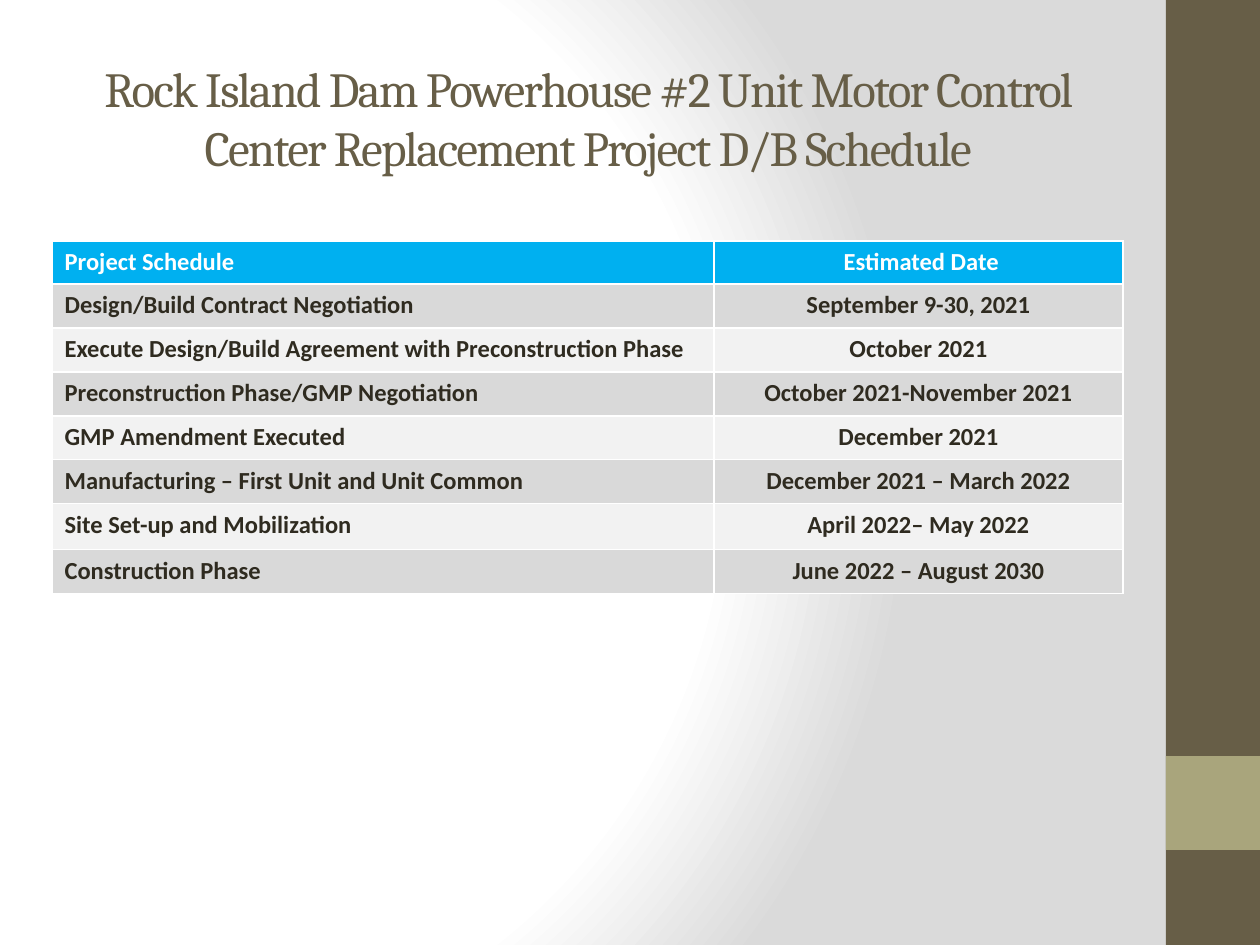
from dataclasses import dataclass

from lxml import etree
from pptx import Presentation
from pptx import oxml
from pptx import util as u
from pptx.dml.color import RGBColor
from pptx.enum import shapes, text
from pptx.oxml import ns

SCALE = 914400 / 126
BROWN = RGBColor(0x67, 0x5E, 0x47)
OLIVE = RGBColor(0xA9, 0xA5, 0x7C)
BLUE = RGBColor(0x00, 0xB0, 0xF0)
WHITE = RGBColor(0xFF, 0xFF, 0xFF)
INK = RGBColor(0x2F, 0x2B, 0x20)
BANDS = (RGBColor(0xF2, 0xF2, 0xF2), RGBColor(0xD9, 0xD9, 0xD9))
FADE = RGBColor(0xDA, 0xDA, 0xDA)


@dataclass(frozen=True)
class Box:
    x: int
    y: int
    w: int
    h: int

    def emu(self) -> tuple:
        return tuple(px(n) for n in (self.x, self.y, self.w, self.h))


@dataclass(frozen=True)
class Bar:
    box: Box
    color: RGBColor


@dataclass(frozen=True)
class Step:
    task: str
    date: str
    high: int = 44


BARS = (
    Bar(Box(1166, 0, 94, 945), BROWN),
    Bar(Box(1166, 756, 94, 94), OLIVE),
)
TITLE = ("Rock Island Dam Powerhouse #2 Unit Motor Control Center "
         "Replacement Project D/B Schedule")
COLS = (662, 409)
STEPS = (
    Step("Project Schedule", " Estimated Date", 43),
    Step("Design/Build Contract Negotiation", "September 9-30, 2021"),
    Step("Execute Design/Build Agreement with Preconstruction Phase",
         "October 2021"),
    Step("Preconstruction Phase/GMP Negotiation", "October 2021-November 2021"),
    Step("GMP Amendment Executed", "December 2021"),
    Step("Manufacturing – First Unit and Unit Common",
         "December 2021 – March 2022"),
    Step("Site Set-up and Mobilization", "April 2022– May 2022", 46),
    Step("Construction Phase", "June 2022 – August 2030"),
)


def px(n: int) -> u.Emu:
    return u.Emu(round(n * SCALE))


def back(slide) -> None:
    """Fill the background with a round gradient, white at the left."""
    stops = "".join(
        f'<a:gs pos="{pos * 1000}"><a:srgbClr val="{color}"/></a:gs>'
        for pos, color in ((0, WHITE), (75, WHITE), (100, FADE)))
    slide.element.cSld.insert(0, oxml.parse_xml(
        f'<p:bg {ns.nsdecls("p", "a")}><p:bgPr><a:gradFill rotWithShape="1">'
        f'<a:gsLst>{stops}</a:gsLst><a:path path="circle">'
        '<a:fillToRect l="20000" t="50000" r="100000" b="50000"/></a:path>'
        '</a:gradFill><a:effectLst/></p:bgPr></p:bg>'))


def draw(slide, bar: Bar) -> None:
    rect = slide.shapes.add_shape(
        shapes.MSO_SHAPE.RECTANGLE, *bar.box.emu())
    rect.shadow.inherit = False
    rect.fill.solid()
    rect.fill.fore_color.rgb = bar.color
    rect.line.fill.background()


def write(para, words: str, face: str, size: int, color: RGBColor):
    run = para.add_run()
    run.text = words
    run.font.name = face
    run.font.size = u.Pt(size)
    run.font.color.rgb = color
    return run


def head(slide) -> None:
    frame = slide.shapes.add_textbox(*Box(63, 38, 1050, 158).emu()).text_frame
    frame.word_wrap = True
    frame.vertical_anchor = text.MSO_ANCHOR.MIDDLE
    para = frame.paragraphs[0]
    para.alignment = text.PP_ALIGN.CENTER
    run = write(para, TITLE, "Cambria", 28, BROWN)
    run.font._element.set("spc", "-100")


def edge(cell, sides: str) -> None:
    """Draw white lines on the given sides, in the order L, R, T, B."""
    props = cell._tc.get_or_add_tcPr()
    for i, side in enumerate(sides):
        line = etree.Element(ns.qn(f"a:ln{side}"), w=str(u.Pt(1)))
        fill = etree.SubElement(line, ns.qn("a:solidFill"))
        etree.SubElement(fill, ns.qn("a:srgbClr"), val=str(WHITE))
        props.insert(i, line)


def grid(slide) -> None:
    box = Box(52, 241, sum(COLS), sum(s.high for s in STEPS))
    table = slide.shapes.add_table(
        len(STEPS), len(COLS), *box.emu()).table
    for col, wide in zip(table.columns, COLS):
        col.width = px(wide)
    for r, step in enumerate(STEPS):
        table.rows[r].height = px(step.high)
        for c, words in enumerate((step.task, step.date)):
            cell = table.cell(r, c)
            cell.fill.solid()
            cell.fill.fore_color.rgb = BANDS[r % 2] if r else BLUE
            edge(cell, ("L" if c else "R") + ("TB" if r else "B"))
            para = cell.text_frame.paragraphs[0]
            para.alignment = (text.PP_ALIGN.CENTER if c
                              else text.PP_ALIGN.LEFT)
            run = write(para, words, "Calibri", 14, INK if r else WHITE)
            run.font.bold = True


def main() -> None:
    deck = Presentation()
    deck.slide_width, deck.slide_height = px(1260), px(945)
    slide = deck.slides.add_slide(deck.slide_layouts[6])
    back(slide)
    for bar in BARS:
        draw(slide, bar)
    head(slide)
    grid(slide)
    deck.save("out.pptx")


if __name__ == "__main__":
    main()
